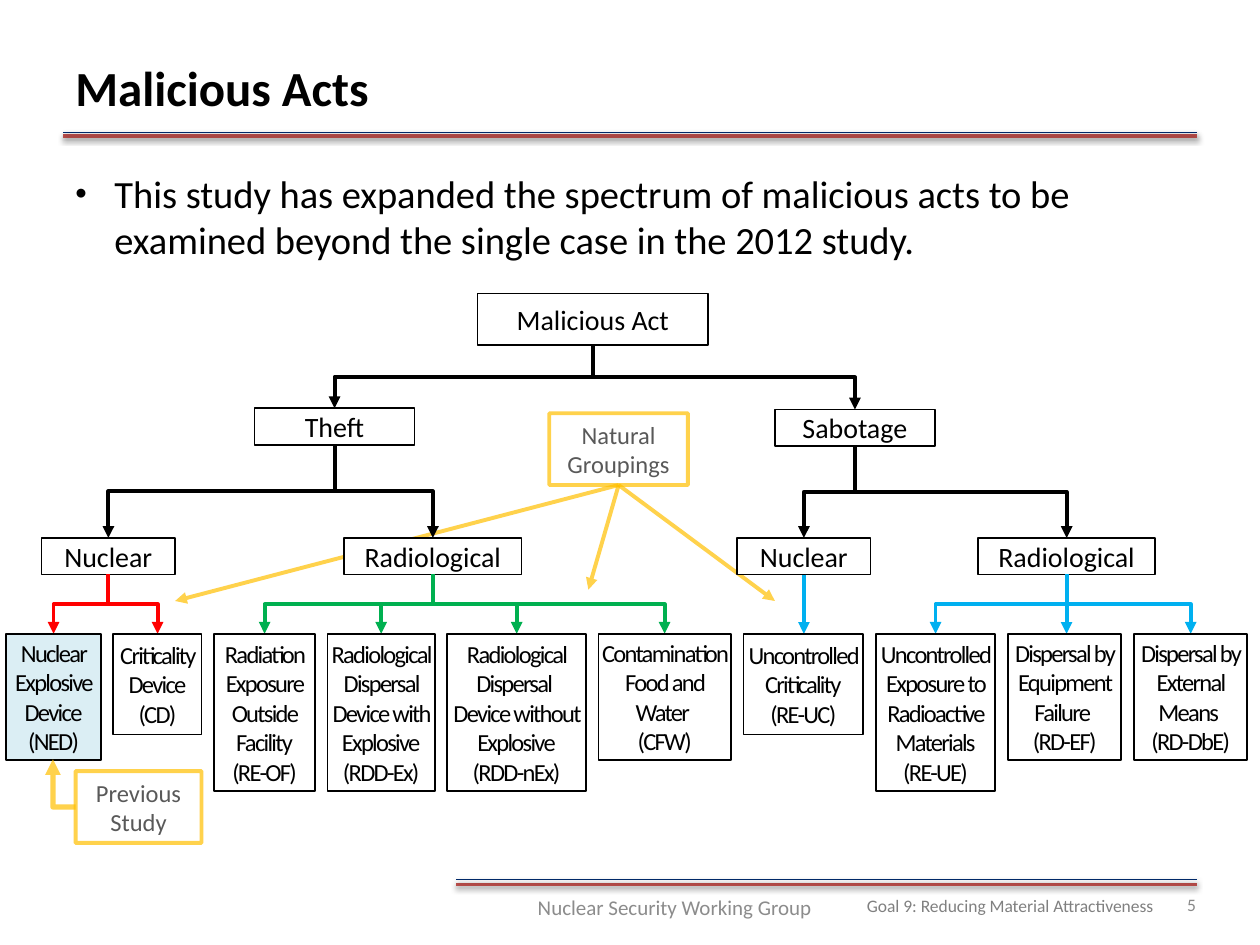
import dataclasses
import typing

import lxml.etree
import pptx
import pptx.dml.color
import pptx.enum.shapes
import pptx.enum.text
import pptx.oxml.ns
import pptx.util

Inches = pptx.util.Inches
Pt = pptx.util.Pt
qn = pptx.oxml.ns.qn
ALIGN = pptx.enum.text.PP_ALIGN
ANCHOR = pptx.enum.text.MSO_ANCHOR
CONNECTOR = pptx.enum.shapes.MSO_CONNECTOR


@dataclasses.dataclass(frozen=True)
class Theme:
    font: str = "Calibri"
    black: str = "000000"
    white: str = "FFFFFF"
    navy: str = "002868"
    brick: str = "C0504D"
    amber: str = "FFC000"
    amber_alpha: int = 70
    red: str = "FF0000"
    green: str = "00B050"
    blue: str = "00B0F0"
    pale_blue: str = "DBEEF4"
    callout_text: str = "595959"
    footer_text: str = "808080"
    group_text: str = "8C8C8C"
    number_text: str = "898989"
    title_size: int = 28
    body_size: int = 22
    node_size: int = 16
    leaf_size: int = 14
    group_size: int = 12
    footer_size: int = 10


class Box(typing.NamedTuple):
    left: float
    top: float
    width: float
    height: float

    @property
    def center(self):
        return self.left + self.width / 2

    @property
    def bottom(self):
        return self.top + self.height

    def inches(self):
        return [Inches(length) for length in self]


THEME = Theme()
LEAF_GAP = 0.1
LEAF_HEIGHTS = {3: 0.8, 4: 1, 5: 1.25}

# Each leaf: text, width, number of lines
THEFT = [
    ("Nuclear", Box(0.28, 1.94, 1.06, 0.29), THEME.red, [
        ("Nuclear Explosive Device\v(NED)", 0.75, 4),
        ("Criticality Device\v(CD)", 0.7, 3)]),
    ("Radiological", Box(2.68, 1.94, 1.41, 0.29), THEME.green, [
        ("Radiation Exposure Outside Facility\v(RE-OF)", 0.8, 5),
        ("Radiological Dispersal Device with Explosive\v(RDD-Ex)", 0.85, 5),
        ("Radiological Dispersal \vDevice without Explosive\v(RDD-nEx)", 1.1, 5),
        ("Contamination Food and Water \v(CFW)", 1.05, 4)]),
]
SABOTAGE = [
    ("Nuclear", Box(5.8, 1.94, 1.06, 0.29), THEME.blue, [
        ("Uncontrolled Criticality\v(RE-UC)", 0.95, 3)]),
    ("Radiological", Box(7.71, 1.94, 1.41, 0.29), THEME.blue, [
        ("Uncontrolled Exposure to Radioactive Materials\v(RE-UE)", 0.95, 5),
        ("Dispersal by Equipment Failure \v(RD-EF)", 0.9, 4),
        ("Dispersal by External Means \v(RD-DbE)", 0.9, 4)]),
]
BRANCHES = [("Theft", Box(1.97, 0.91, 1.27, 0.29), THEFT),
            ("Sabotage", Box(6.1, 0.92, 1.27, 0.29), SABOTAGE)]


def rgb(color):
    return pptx.dml.color.RGBColor.from_string(color)


def add_xml(parent, tag, **attributes):
    return lxml.etree.SubElement(parent, qn(tag), attributes)


def style_line(item, color, width, alpha=None):
    item.line.color.rgb = rgb(color)
    item.line.width = Pt(width)
    if alpha:
        add_xml(item.line._get_or_add_ln().find(".//" + qn("a:srgbClr")),
                "a:alpha", val=str(alpha * 1000))


def write(shape, text, size, color=THEME.black, align=ALIGN.LEFT,
          anchor=ANCHOR.MIDDLE, margins=(0.1, 0.05), bold=False, spacing=0):
    frame = shape.text_frame
    frame.word_wrap = True
    frame.vertical_anchor = anchor
    frame.margin_left = frame.margin_right = Inches(margins[0])
    frame.margin_top = frame.margin_bottom = Inches(margins[1])
    frame.text = text
    para = frame.paragraphs[0]
    para.alignment = align
    for span in para.runs:
        span.font.name, span.font.size = THEME.font, Pt(size)
        span.font.bold, span.font.color.rgb = bold, rgb(color)
        if spacing:
            span.font._element.set("spc", str(spacing * 100))
    return para


def add_text(page, box, text, size, **style):
    return write(page.shapes.add_textbox(*box.inches()), text, size, **style)


def add_node(page, box, text, size, fill=None, line=(THEME.black, 1), **style):
    shape = page.shapes.add_shape(pptx.enum.shapes.MSO_SHAPE.RECTANGLE, *box.inches())
    shape.shadow.inherit = False
    if fill:
        shape.fill.solid()
        shape.fill.fore_color.rgb = rgb(fill)
    else:
        shape.fill.background()
    style_line(shape, *line)
    write(shape, text, size, align=ALIGN.CENTER, **style)


def add_line(page, start, end, line, kind=CONNECTOR.STRAIGHT, arrow=True):
    connector = page.shapes.add_connector(
        kind, *[Inches(length) for length in (*start, *end)])
    style_line(connector, *line)
    if arrow:
        add_xml(connector.line._get_or_add_ln(), "a:tailEnd", type="triangle")
    add_xml(connector._element.spPr, "a:effectLst")
    return connector


def add_drop(page, start, end, color):
    """Arrow going down, across at mid height, then down to its end."""
    (x1, y1), (x2, y2) = start, end
    if abs(x2 - x1) < 0.02:
        add_line(page, start, (x1, y2), (color, 2.25))
        return
    half_run, half_drop = abs(x2 - x1) / 2, (y2 - y1) / 2
    x, y = (x1 + x2) / 2, (y1 + y2) / 2
    connector = add_line(page, (x - half_drop, y - half_run),
                         (x + half_drop, y + half_run), (color, 2.25), CONNECTOR.ELBOW)
    frame = connector._element.spPr.xfrm
    frame.set("rot", str((90 if x2 < x1 else 270) * 60000))
    if x2 > x1:
        frame.set("flipH", "1")


def add_double_rule(page, box):
    for y, color, width in ((box.bottom, THEME.brick, 2), (box.top, THEME.navy, 0.5)):
        rule = add_line(page, (box.left, y), (box.left + box.width, y),
                        (color, width), arrow=False)
        effects = rule._element.spPr.find(qn("a:effectLst"))
        shadow = add_xml(effects, "a:outerShdw", blurRad=str(Pt(3.1)),
                         dist=str(Pt(1.6)), dir="5400000", rotWithShape="0")
        add_xml(add_xml(shadow, "a:srgbClr", val=THEME.black), "a:alpha", val="38000")


def add_header(page, box):
    add_double_rule(page, Box(box.left, box.top + 0.75, box.width, 0.03))
    add_text(page, box, "Malicious Acts", THEME.title_size, bold=True)


def add_body(page, box):
    para = add_text(page, box, "This study has expanded the spectrum of malicious acts "
                    "to be examined beyond the single case in the 2012 study.",
                    THEME.body_size, anchor=ANCHOR.TOP)
    para.space_after = Pt(3)
    properties = para._p.get_or_add_pPr()
    properties.set("marL", str(Inches(0.31)))
    properties.set("indent", str(-Inches(0.31)))
    add_xml(properties, "a:buSzPct", val="85000")
    add_xml(properties, "a:buFont", typeface="Arial")
    add_xml(properties, "a:buChar", char="•")


def add_footer(page, box):
    add_double_rule(page, Box(box.left, box.top, box.width, 0.04))
    parts = [
        (Box(1.8, 0.07, 3.83, 0.27), "Goal 9: Reducing Material Attractiveness",
         THEME.footer_size, THEME.footer_text, ALIGN.RIGHT),
        (Box(0.15, 0.02, 3.17, 0.4), "Nuclear Security Working Group",
         THEME.group_size, THEME.group_text, ALIGN.CENTER),
        (Box(5.55, 0, 0.42, 0.4), "5", THEME.footer_size, THEME.number_text, ALIGN.RIGHT)]
    for part, text, size, color, align in parts:
        place = part._replace(left=box.left + part.left, top=box.top + part.top)
        add_text(page, place, text, size, color=color, align=align)


def add_callout(page, box, text):
    add_node(page, box, text, THEME.leaf_size, color=THEME.callout_text,
             line=(THEME.amber, 2.25, THEME.amber_alpha))


def add_groupings(page, box):
    add_callout(page, box, "Natural Groupings")
    for across, down in ((-0.24, 0.83), (1.24, 0.92), (-3.52, 0.92)):
        add_line(page, (box.center, box.bottom), (box.center + across, box.bottom + down),
                 (THEME.amber, 2.25, THEME.amber_alpha))


def add_previous_study(page, box):
    add_callout(page, box, "Previous Study")
    middle = box.top + box.height / 2
    elbow = add_line(page, (box.left - 0.18, middle - 0.38), (box.left, middle),
                     (THEME.amber, 3, THEME.amber_alpha), CONNECTOR.ELBOW)
    elbow._element.spPr.find(qn("a:prstGeom")).set("prst", "bentConnector2")
    elbow._element.spPr.xfrm.set("rot", str(180 * 60000))


def add_tree(page, box):
    def place(part):
        return part._replace(left=box.left + part.left, top=box.top + part.top)

    def add_branch(part, text, parent=None, margins=(0, 0)):
        node = place(part)
        if parent:
            add_drop(page, (parent.center, parent.bottom), (node.center, node.top), THEME.black)
        add_node(page, node, text, THEME.node_size, fill=THEME.white, margins=margins)
        return node

    root = add_branch(Box(3.74, 0, 1.83, 0.41), "Malicious Act", margins=(0.11, 0.05))
    leaf_left = 0
    for act, act_box, categories in BRANCHES:
        act_node = add_branch(act_box, act, root)
        for name, part, color, leaves in categories:
            category = add_branch(part, name, act_node)
            for text, width, lines in leaves:
                leaf = place(Box(leaf_left, 2.7, width, LEAF_HEIGHTS[lines]))
                add_drop(page, (category.center, category.bottom),
                         (leaf.center, leaf.top), color)
                add_node(page, leaf, text, THEME.leaf_size, margins=(0, 0.05), spacing=-1,
                         fill=None if leaf_left else THEME.pale_blue)
                leaf_left += width + LEAF_GAP


def main():
    deck = pptx.Presentation()
    deck.slide_width, deck.slide_height = Inches(10), Inches(7.5)
    page = deck.slides.add_slide(deck.slide_layouts[6])
    add_header(page, Box(0.5, 0.3, 9, 0.78))
    add_footer(page, Box(3.62, 6.98, 5.88, 0.42))
    add_body(page, Box(0.5, 1.3, 9, 1))
    add_groupings(page, Box(4.36, 3.28, 1.1, 0.57))
    add_tree(page, Box(0.05, 2.33, 9.86, 3.95))
    add_previous_study(page, Box(0.6, 6.12, 1, 0.57))
    deck.save("out.pptx")


if __name__ == "__main__":
    main()
